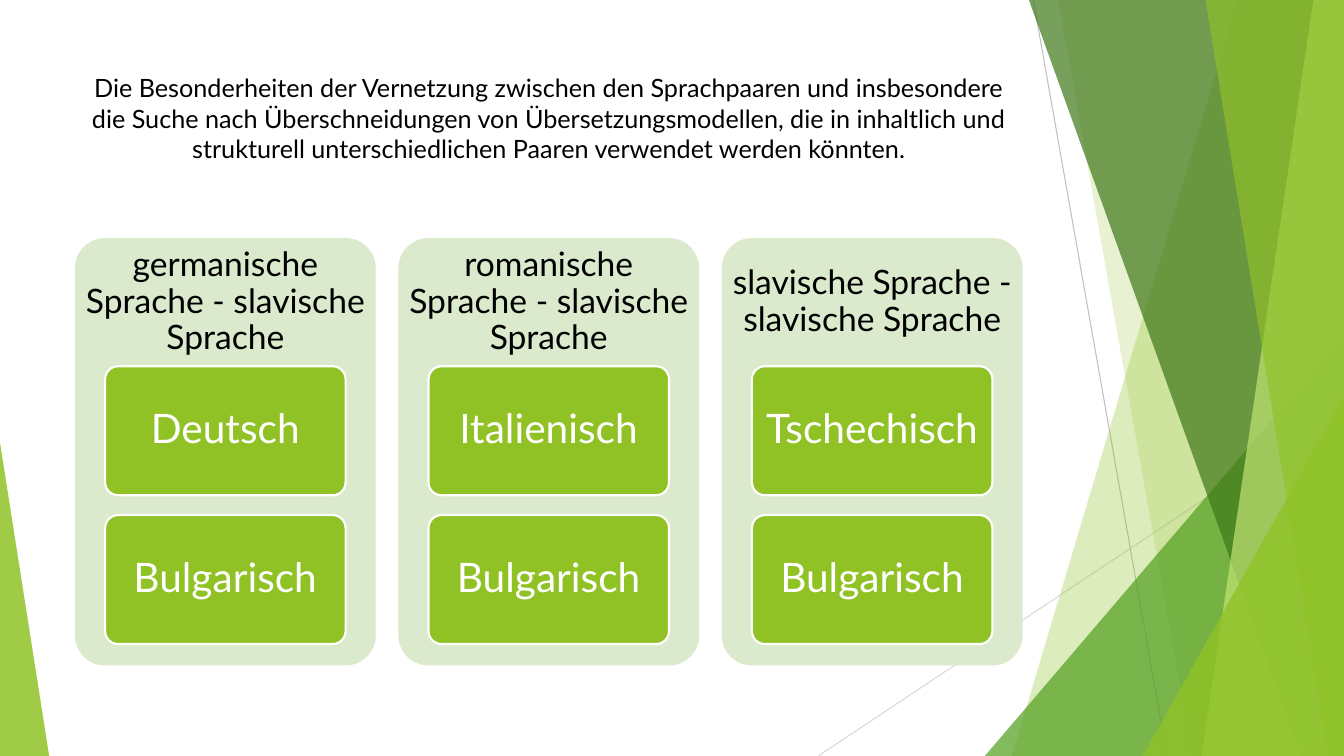
from lxml.etree import SubElement
from pptx import Presentation
from pptx.dml.color import RGBColor
from pptx.enum.shapes import MSO_CONNECTOR, MSO_SHAPE
from pptx.enum.text import MSO_ANCHOR as ANCHOR, PP_ALIGN as ALIGN
from pptx.oxml.ns import qn
from pptx.util import Cm, Pt

TITLE = ("Die Besonderheiten der Vernetzung zwischen den Sprachpaaren und insbesondere "
         "die Suche nach Überschneidungen von Übersetzungsmodellen, die in inhaltlich und "
         "strukturell unterschiedlichen Paaren verwendet werden könnten.")
PAIRS = [
    ("germanische Sprache - slavische Sprache", ["Deutsch", "Bulgarisch"]),
    ("romanische Sprache - slavische Sprache", ["Italienisch", "Bulgarisch"]),
    ("slavische Sprache - slavische Sprache", ["Tschechisch", "Bulgarisch"]),
]
COLORS = {
    "green": "90C226", "leaf": "54A021", "forest": "3F7819", "lime": "C0E474",
    "panel": "DBE9CD", "black": "000000", "white": "FFFFFF",
    "gray": "BFBFBF", "light gray": "D9D9D9",
}
FONT = "Lato"
W, H = 33.87, 19.05  # slide size, all lengths in cm

# start, end, colour
LINES = [
    ((26.04, 0), (29.41, H), "gray"),
    ((W, 10.24), (20.62, H), "light gray"),
]
# Bands reach the right edge: ("band", left at top, left at bottom, colour, opacity)
# Wedges stand on the bottom edge: ("wedge", left, width, top, apex, colour, opacity)
DECOR = [
    ("band", 31.19, 25.5, "green", 30),
    ("band", 26.67, 30.05, "green", 20),
    ("wedge", 24.82, 9.05, 8.46, 1, "leaf", 72),
    ("band", 25.93, 32.79, "forest", 70),
    ("band", 33.1, 30.28, "lime", 70),
    ("band", 30.38, 33.48, "green", 65),
    ("wedge", 28.8, 5.07, 9.98, 1, "green", 80),
    ("wedge", 0, 1.24, 11.15, 0, "green", 85),
]

LEFT, TOP = 1.89, 6.0
PANEL_W, PANEL_H, PANEL_STEP = 7.58, 10.77, 8.21 - 0.06
HEAD_H = 3.23
BOX_W, BOX_H, BOX_STEP = 6.06, 3.25, 3.75
BOX_INDENT = (PANEL_W - BOX_W) / 2
ROUNDING = 0.1

prs = Presentation()
prs.slide_width, prs.slide_height = Cm(W), Cm(H)
shapes = prs.slides.add_slide(prs.slide_layouts[6]).shapes


def rgb(name):
    return RGBColor.from_string(COLORS[name])


def paint(sp, color, opacity=100):
    sp.shadow.inherit = False
    sp.fill.solid()
    sp.fill.fore_color.rgb = rgb(color)
    sp.line.fill.background()
    if opacity < 100:
        clr = sp.fill._xPr.find(qn("a:solidFill"))[0]
        SubElement(clr, qn("a:alpha")).set("val", str(opacity * 1000))


def add_line(start, end, color):
    ln = shapes.add_connector(MSO_CONNECTOR.STRAIGHT, *map(Cm, start + end))
    ln.line.color.rgb = rgb(color)
    ln.line.width = Pt(0.75)
    SubElement(ln._element.spPr, qn("a:effectLst"))


def add_band(top_x, bottom_x, color, opacity):
    fb = shapes.build_freeform(Cm(top_x), 0)
    corners = [(W, 0), (W, H), (bottom_x, H)]
    fb.add_line_segments([(Cm(x), Cm(y)) for x, y in corners], close=True)
    paint(fb.convert_to_shape(), color, opacity)


def add_wedge(left, width, top, apex, color, opacity):
    sp = shapes.add_shape(MSO_SHAPE.ISOSCELES_TRIANGLE,
                          Cm(left), Cm(top), Cm(width), Cm(H - top))
    sp.adjustments[0] = apex
    paint(sp, color, opacity)


def add_rounded(left, top, width, height, color):
    sp = shapes.add_shape(MSO_SHAPE.ROUNDED_RECTANGLE,
                          Cm(left), Cm(top), Cm(width), Cm(height))
    sp.adjustments[0] = ROUNDING
    paint(sp, color)
    return sp


def write(sp, text, size, color, anchor=ANCHOR.MIDDLE, inset=(0.25, 0.25), spacing=0.9):
    """Fill a shape with one centred paragraph; inset is (horizontal, vertical)."""
    tf = sp.text_frame
    tf.word_wrap = True
    tf.vertical_anchor = anchor
    tf.margin_left = tf.margin_right = Cm(inset[0])
    tf.margin_top = tf.margin_bottom = Cm(inset[1])
    tf.text = text
    p = tf.paragraphs[0]
    p.alignment = ALIGN.CENTER
    p.line_spacing = spacing
    font = p.runs[0].font
    font.name, font.size = FONT, Pt(size)
    font.color.rgb = rgb(color)


for line in LINES:
    add_line(*line)
for kind, *args in DECOR:
    (add_band if kind == "band" else add_wedge)(*args)

title = shapes.add_textbox(Cm(LEFT), Cm(1.7), Cm(23.88), Cm(3.66))
write(title, TITLE, 18, "black", ANCHOR.TOP, (0.25, 0.13), 1.0)

for col, (heading, languages) in enumerate(PAIRS):
    x = LEFT + col * PANEL_STEP
    add_rounded(x, TOP, PANEL_W, PANEL_H, "panel")
    head = shapes.add_textbox(Cm(x), Cm(TOP), Cm(PANEL_W), Cm(HEAD_H))
    write(head, heading, 24, "black")
    for row, language in enumerate(languages):
        box = add_rounded(x + BOX_INDENT, TOP + HEAD_H + row * BOX_STEP,
                          BOX_W, BOX_H, "green")
        box.line.color.rgb = rgb("white")
        box.line.width = Pt(1.5)
        write(box, language, 29, "white", inset=(0.2, 0.15))

prs.save("out.pptx")
